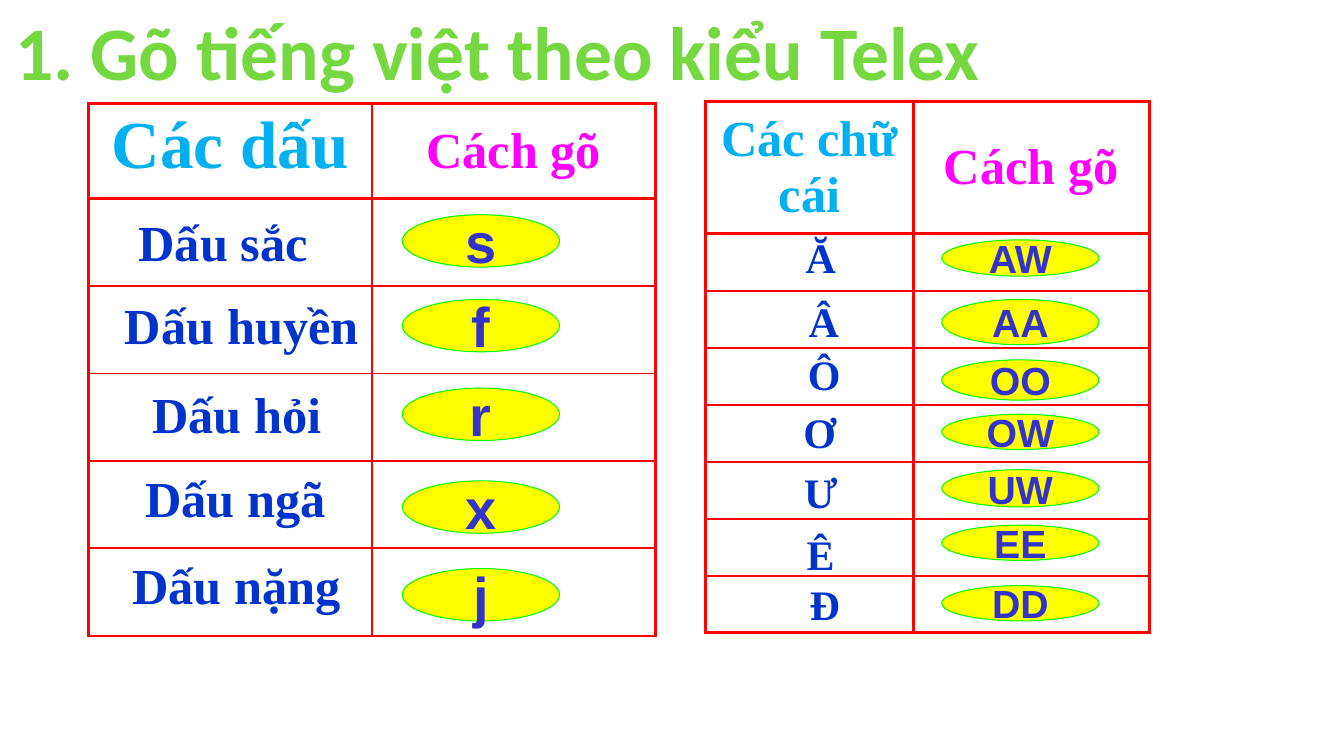
from lxml import etree
from pptx import Presentation
from pptx.dml.color import RGBColor
from pptx.enum.shapes import MSO_SHAPE
from pptx.enum.text import MSO_ANCHOR, MSO_AUTO_SIZE, PP_ALIGN
from pptx.oxml.ns import qn
from pptx.util import Inches, Pt

COLORS = {
    "title": "75D840", "sign_header": "00B0F0", "key_header": "FF00FF",
    "border": "FF0000", "label": "0033CC", "key": "3333CC",
    "oval": "FFFF00", "oval_line": "00FF00",
}
SERIF = "Times New Roman"


def write(frame, text, size, color, font=SERIF, anchor=MSO_ANCHOR.TOP, wrap=True):
    frame.text = text
    frame.word_wrap = wrap
    frame.vertical_anchor = anchor
    paragraph = frame.paragraphs[0]
    paragraph.alignment = PP_ALIGN.CENTER
    run_font = paragraph.runs[0].font
    run_font.name, run_font.size, run_font.bold = font, Pt(size), True
    run_font.color.rgb = RGBColor.from_string(COLORS[color])


def set_borders(cell, **widths):
    """Draw the cell's sides, given as L, R, T and B widths in points."""
    properties = cell._tc.get_or_add_tcPr()
    for position, (side, width) in enumerate(widths.items()):
        line = etree.Element(qn(f"a:ln{side}"), w=str(Pt(width)))
        fill = etree.SubElement(line, qn("a:solidFill"))
        etree.SubElement(fill, qn("a:srgbClr"), val=COLORS["border"])
        properties.insert(position, line)


# Each row: label, label left, top and width, key, oval top and height
tone_rows = [
    ("Dấu sắc", 0.9, 2.04, 2.63, "s", 2.13, 0.52),
    ("Dấu huyền", 0.92, 2.87, 2.96, "f", 2.97, 0.52),
    ("Dấu hỏi", 0.81, 3.75, 3.08, "r", 3.85, 0.52),
    ("Dấu ngã", 0.79, 4.58, 3.09, "x", 4.77, 0.52),
    ("Dấu nặng", 0.79, 5.45, 3.11, "j", 5.64, 0.52),
]
letter_rows = [
    ("Ă", 7.53, 2.25, 1.22, "AW", 2.38, 0.36),
    ("Â", 7.56, 2.88, 1.22, "AA", 2.97, 0.45),
    ("Ô", 7.57, 3.41, 1.21, "OO", 3.57, 0.4),
    ("Ơ", 7.49, 3.98, 1.28, "OW", 4.11, 0.35),
    ("Ư", 7.53, 4.58, 1.22, "UW", 4.66, 0.37),
    ("Ê", 7.53, 5.19, 1.22, "EE", 5.21, 0.35),
    ("Đ", 7.57, 5.69, 1.22, "DD", 5.81, 0.35),
]
charts_of_keys = [
    dict(header="Các dấu", header_size=48, header_anchor=MSO_ANCHOR.TOP,
         left=0.88, top=1.03, columns=(2.81, 2.81), height=5.28, header_height=0.94,
         rows=tone_rows, label_size=36, label_height=0.71, key_size=40, oval_left=3.99),
    dict(header="Các chữ cái", header_size=36, header_anchor=MSO_ANCHOR.MIDDLE,
         left=7, top=1.01, columns=(2.06, 2.34), height=5.27, header_height=1.31,
         rows=letter_rows, label_size=30, label_height=0.61, key_size=28, oval_left=9.34),
]

presentation = Presentation()
presentation.slide_width, presentation.slide_height = Inches(13.33), Inches(7.5)
slide = presentation.slides.add_slide(presentation.slide_layouts[5])

title = slide.shapes.title
title.left, title.top, title.width, title.height = 0, 0, Inches(9.87), Inches(1.01)
write(title.text_frame, "1. Gõ tiếng việt theo kiểu Telex", size=54, color="title",
      font="Calibri", wrap=False)
title.text_frame.auto_size = MSO_AUTO_SIZE.NONE

for group in charts_of_keys:
    rows = group["rows"]
    table = slide.shapes.add_table(
        len(rows) + 1, 2, Inches(group["left"]), Inches(group["top"]),
        Inches(sum(group["columns"])), Inches(group["height"])).table
    table.first_row = table.horz_banding = False
    for column, width in zip(table.columns, group["columns"]):
        column.width = Inches(width)
    row_height = (group["height"] - group["header_height"]) / len(rows)
    for index, row in enumerate(table.rows):
        row.height = Inches(row_height if index else group["header_height"])
        for cell in row.cells:
            cell.fill.background()
            cell.margin_left = cell.margin_right = Inches(0.13)
            set_borders(cell, L=2.25, R=2.25, T=2.25 if index < 2 else 1.5,
                        B=2.25 if index in (0, len(rows)) else 1.5)

    headers = [(group["header"], group["header_size"], "sign_header", group["header_anchor"]),
               ("Cách gõ", 36, "key_header", MSO_ANCHOR.MIDDLE)]
    for cell, (text, size, color, anchor) in zip(table.rows[0].cells, headers):
        write(cell.text_frame, text, size=size, color=color)
        cell.vertical_anchor = anchor

    for label, left, top, width, key, oval_top, oval_height in rows:
        label_box = slide.shapes.add_textbox(
            Inches(left), Inches(top), Inches(width), Inches(group["label_height"]))
        write(label_box.text_frame, label, size=group["label_size"], color="label")

        oval = slide.shapes.add_shape(
            MSO_SHAPE.OVAL, Inches(group["oval_left"]), Inches(oval_top),
            Inches(1.56), Inches(oval_height))
        oval.shadow.inherit = False
        oval.fill.solid()
        oval.fill.fore_color.rgb = RGBColor.from_string(COLORS["oval"])
        oval.line.color.rgb = RGBColor.from_string(COLORS["oval_line"])
        oval.line.width = Pt(0.75)
        write(oval.text_frame, key, size=group["key_size"], color="key", font="Arial",
              anchor=MSO_ANCHOR.MIDDLE, wrap=False)

presentation.save("out.pptx")
